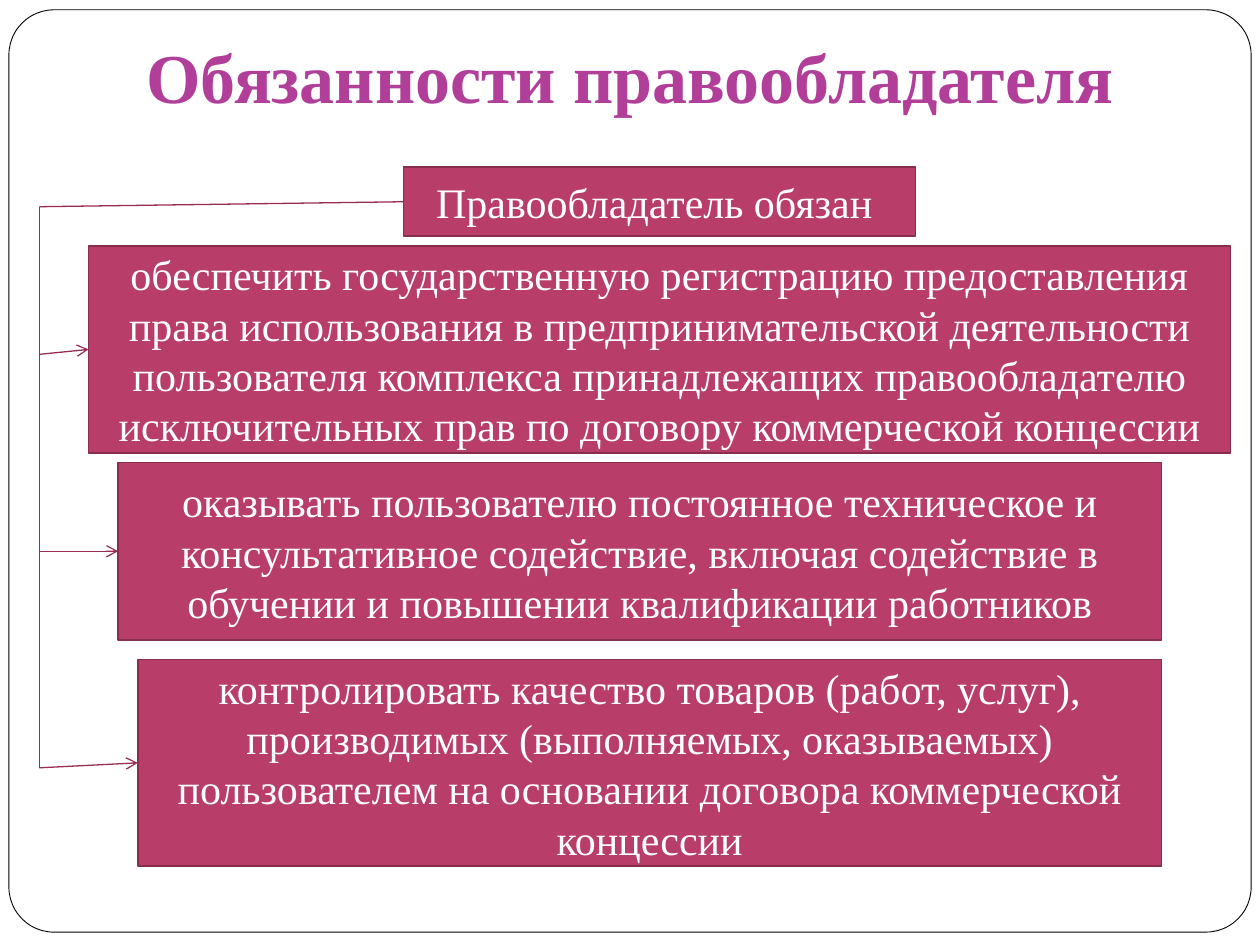
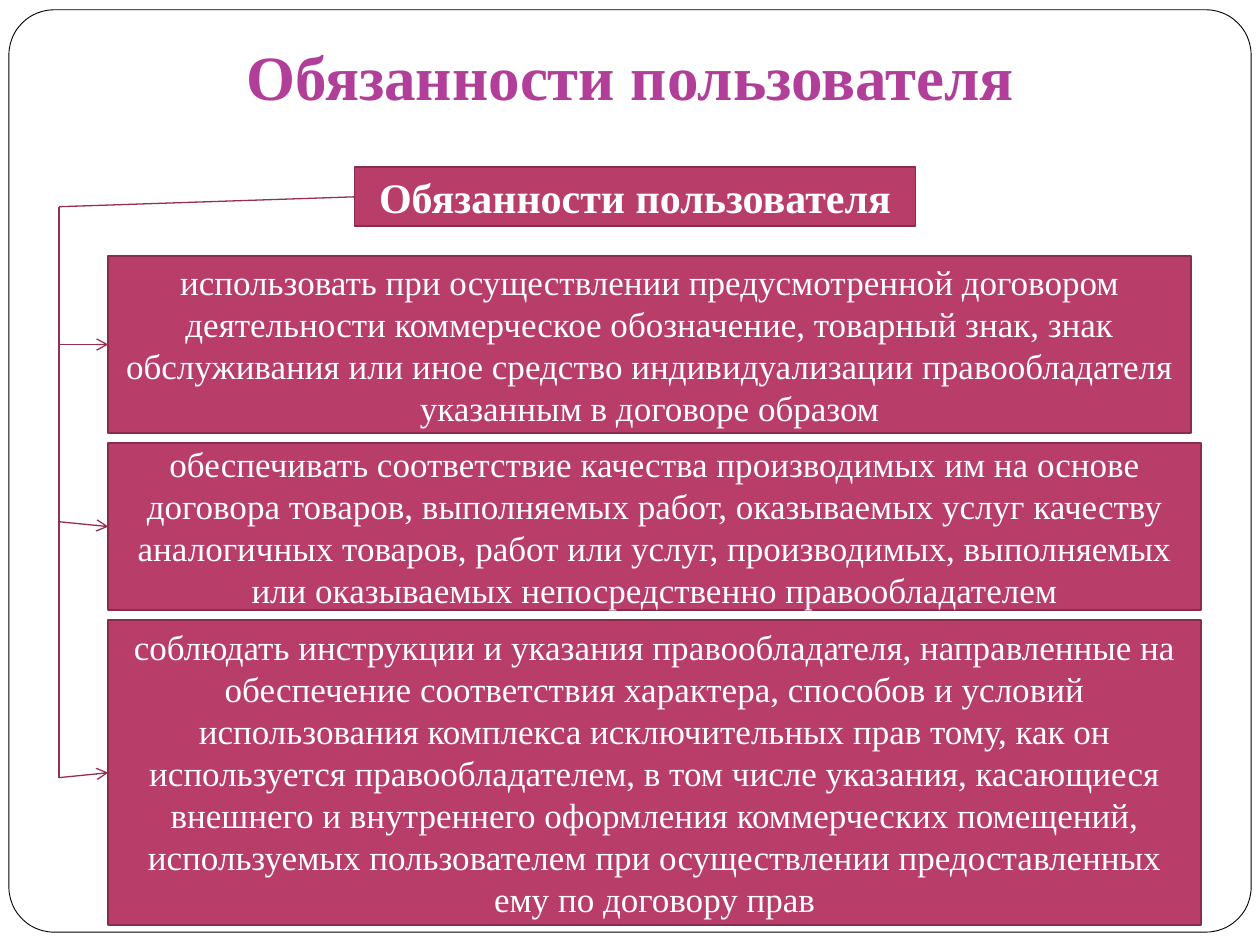
from lxml.etree import SubElement
from pptx import Presentation
from pptx.dml.color import RGBColor
from pptx.enum.shapes import MSO_CONNECTOR as LINE, MSO_SHAPE as SHAPE
from pptx.enum.text import MSO_ANCHOR as ANCHOR, PP_ALIGN as ALIGN
from pptx.oxml.ns import qn
from pptx.util import Inches, Pt

WHITE = RGBColor(0xFF, 0xFF, 0xFF)
BLACK = RGBColor(0, 0, 0)
TITLE = RGBColor(0xB1, 0x3F, 0x9A)
BOX = RGBColor(0xB8, 0x3D, 0x68)
BORDER = RGBColor(0x88, 0x2D, 0x4D)
ARROW = RGBColor(0x98, 0x2C, 0x52)
FONT = "Times New Roman"
COLS, ROWS = 128, 96  # square grid cells
LEFT_SIDE = 1


class Deck:
    """Shared style, and the slide being drawn."""

    def __init__(self):
        self.prs = Presentation()
        self.prs.slide_width, self.prs.slide_height = Inches(10), Inches(7.5)
        self.s = None

    def grid(self, *cells):
        """Turn alternating columns and rows into lengths."""
        sizes = self.prs.slide_width / COLS, self.prs.slide_height / ROWS
        return [round(n * sizes[i % 2]) for i, n in enumerate(cells)]

    def add_slide(self, title, size):
        self.s = self.prs.slides.add_slide(self.prs.slide_layouts[6])
        frame = self.shape(SHAPE.ROUNDED_RECTANGLE, (0.9, 1, 126.2, 93.7), WHITE, BLACK, 0.5)
        frame.adjustments[0] = 0.049
        sp = self.s.shapes.add_textbox(*self.grid(0, 0, COLS, 16))
        sp.text_frame.margin_bottom = Inches(0.1)
        self.set_text(sp, title, size, TITLE, True)

    def shape(self, kind, cells, fill, line, width):
        sp = self.s.shapes.add_shape(kind, *self.grid(*cells))
        sp.shadow.inherit = False
        sp.fill.solid()
        sp.fill.fore_color.rgb = fill
        sp.line.color.rgb = line
        sp.line.width = Pt(width)
        return sp

    def set_text(self, sp, text, size, color, bold=False):
        tf = sp.text_frame
        tf.word_wrap = True
        tf.vertical_anchor = ANCHOR.MIDDLE
        p = tf.paragraphs[0]
        p.text = text
        p.alignment = ALIGN.CENTER
        p.font.name, p.font.size, p.font.bold = FONT, Pt(size), bold
        p.font.color.rgb = color

    def box(self, cells, text, size, bold=False):
        sp = self.shape(SHAPE.RECTANGLE, cells, BOX, BORDER, 1)
        self.set_text(sp, text, size, WHITE, bold)
        return sp

    def line(self, start, end, arrow=False):
        """Join two ends, each a grid point or a box (its left side)."""
        points = [self.grid(*e) if isinstance(e, tuple) else (e.left, e.top + e.height // 2)
                  for e in (start, end)]
        c = self.s.shapes.add_connector(LINE.STRAIGHT, *points[0], *points[1])
        if not isinstance(start, tuple):
            c.begin_connect(start, LEFT_SIDE)
        if not isinstance(end, tuple):
            c.end_connect(end, LEFT_SIDE)
        c.line.color.rgb = ARROW
        c.line.width = Pt(0.75)
        sp_pr = c.element.spPr
        if arrow:
            SubElement(sp_pr.find(qn("a:ln")), qn("a:tailEnd"), type="arrow")
        SubElement(sp_pr, qn("a:effectLst"))

    def tree(self, head, boxes, trunk, branch_rows):
        """Lead from the head down a trunk and out to every box."""
        top = (trunk, 21)
        self.line(head, top)
        self.line(top, (trunk, branch_rows[-1]))
        for row, box in zip(branch_rows, boxes):
            self.line((trunk, row), box, arrow=True)


def main():
    deck = Deck()

    # Duties of the right holder
    deck.add_slide("Обязанности правообладателя", 40)
    head = deck.box((41, 17, 52, 7), "Правообладатель обязан ", 24)
    duties = [
        ((9, 25, 116, 21), "обеспечить государственную регистрацию предоставления права "
         "использования в предпринимательской деятельности пользователя комплекса "
         "принадлежащих правообладателю исключительных прав по договору коммерческой концессии"),
        ((12, 47, 106, 18), "оказывать пользователю постоянное техническое и консультативное "
         "содействие, включая содействие в обучении и повышении квалификации работников"),
        ((14, 67, 104, 21), "контролировать качество товаров (работ, услуг), производимых "
         "(выполняемых, оказываемых) пользователем на основании договора коммерческой концессии"),
    ]
    boxes = [deck.box(cells, text, 24) for cells, text in duties]
    deck.tree(head, boxes, trunk=4, branch_rows=(36, 56, 78))

    # Duties of the user
    deck.add_slide("Обязанности пользователя", 36)
    head = deck.box((36, 17, 57, 6), "Обязанности пользователя", 24, bold=True)
    duties = [
        ((11, 26, 110, 18), "использовать при осуществлении предусмотренной договором "
         "деятельности коммерческое обозначение, товарный знак, знак обслуживания или иное "
         "средство индивидуализации правообладателя указанным в договоре образом"),
        ((11, 45, 111, 17), "обеспечивать соответствие качества производимых им на основе "
         "договора товаров, выполняемых работ, оказываемых услуг качеству аналогичных товаров, "
         "работ или услуг, производимых, выполняемых или оказываемых непосредственно "
         "правообладателем"),
        ((11, 63, 111, 31), "соблюдать инструкции и указания правообладателя, направленные на "
         "обеспечение соответствия характера, способов и условий использования комплекса "
         "исключительных прав тому, как он используется правообладателем, в том числе указания, "
         "касающиеся внешнего и внутреннего оформления коммерческих помещений, используемых "
         "пользователем при осуществлении предоставленных ему по договору прав"),
    ]
    boxes = [deck.box(cells, text, 20) for cells, text in duties]
    deck.tree(head, boxes, trunk=6, branch_rows=(35, 53, 79))

    deck.prs.save("out.pptx")


if __name__ == "__main__":
    main()
